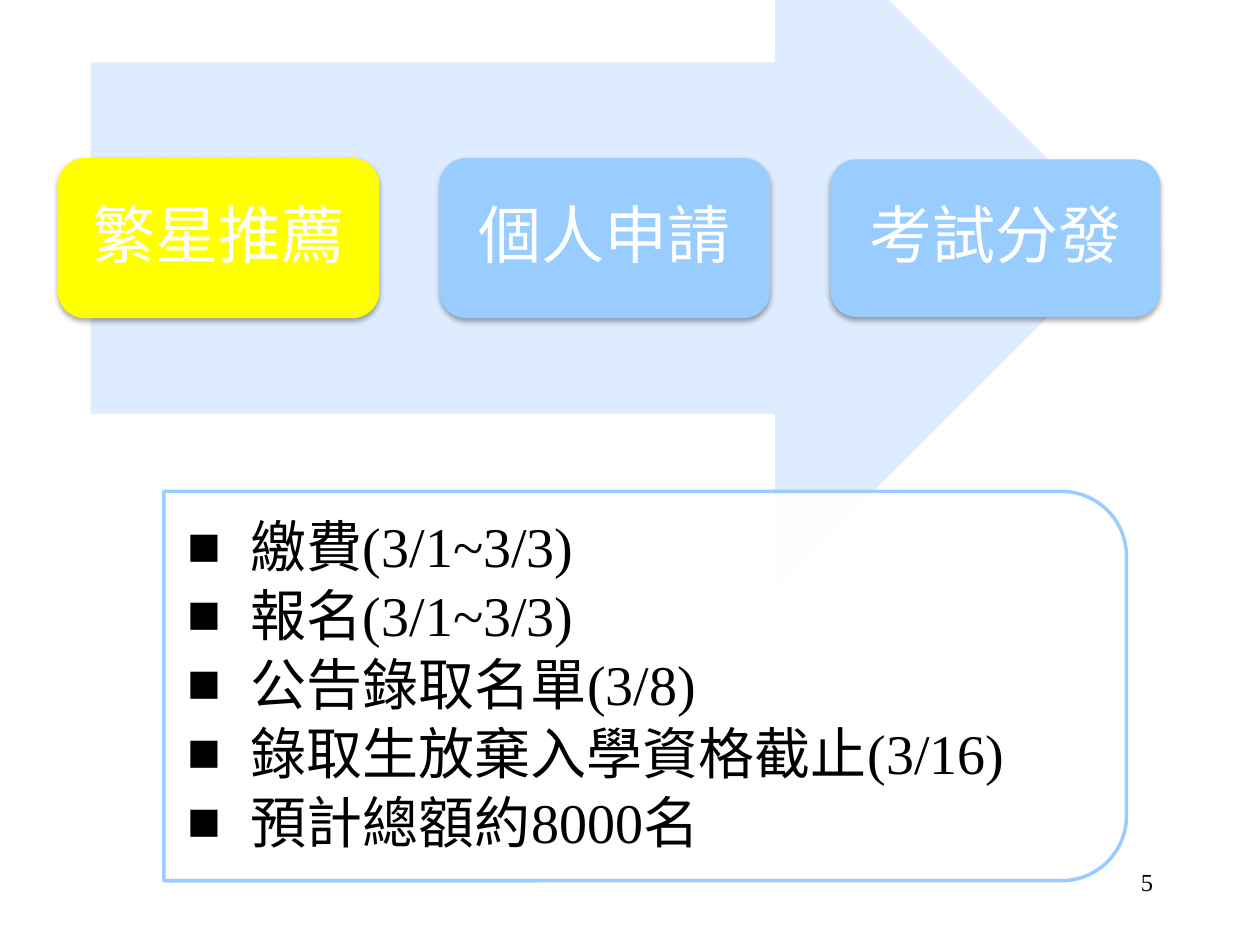
"""Build the admission channel slide: a three-step arrow with a schedule panel."""
from lxml.etree import SubElement
from pptx import Presentation
from pptx.dml.color import RGBColor
from pptx.enum.shapes import MSO_SHAPE
from pptx.enum.text import MSO_ANCHOR, MSO_AUTO_SIZE, PP_ALIGN
from pptx.oxml.ns import qn
from pptx.util import Inches, Pt

COLORS = {"white": "FFFFFF", "black": "000000", "arrow": "DEECFF",
          "current": "FFFF00", "step": "99CCFF"}
CHINESE_FONT, LATIN_FONT = "Noto Sans CJK SC", "Times New Roman"
STEPS = [
    ("繁星推薦", "current", 0.46, 2.55, 1.27),
    ("個人申請", "step", 3.49, 2.62, 1.27),
    ("考試分發", "step", 6.59, 2.62, 1.25),
]
SCHEDULE = ["繳費(3/1~3/3)", "報名(3/1~3/3)", "公告錄取名單(3/8)",
            "錄取生放棄入學資格截止(3/16)", "預計總額約8000名"]
PAGE_NUMBER = "5"
STEP_MIDDLE = 1.89
ARROW_BOX = (0.72, -0.9, 8.22, 5.58)
PANEL_LEFT, PANEL_TOP, PANEL_WIDTH, PANEL_HEIGHT = 1.3, 3.9, 7.64, 3.09
LIST_BOX = (1.3, 4.06, 7.58, 2.79)
NUMBER_BOX = (7.17, 6.83, 2.08, 0.5)


def color(name):
    return RGBColor.from_string(COLORS[name])


def add_element(parent, tag, **attributes):
    return SubElement(parent, qn(tag), attributes)


def add_shape(slide, preset, box, fill):
    shape = slide.shapes.add_shape(preset, *map(Inches, box))
    shape.shadow.inherit = False
    shape.fill.solid()
    shape.fill.fore_color.rgb = color(fill)
    shape.line.fill.background()
    return shape


def add_soft_shadow(shape):
    effects = shape._element.spPr.find(qn("a:effectLst"))
    shadow = add_element(effects, "a:outerShdw", blurRad=str(Pt(3.1)), dist=str(Pt(1.8)),
                         dir="5400000", rotWithShape="0")
    tint = add_element(shadow, "a:srgbClr", val=COLORS["black"])
    add_element(tint, "a:alpha", val="35000")


def set_margins(frame, left, others):
    frame.margin_left = Inches(left)
    frame.margin_top = frame.margin_right = frame.margin_bottom = Inches(others)
    frame.vertical_anchor = MSO_ANCHOR.MIDDLE
    frame.word_wrap = True


def space_after(paragraph, percent):
    spacing = add_element(paragraph._p.get_or_add_pPr(), "a:spcAft")
    add_element(spacing, "a:spcPct", val=str(percent * 1000))


def format_run(paragraph, size, name, fill):
    run = paragraph.runs[0]
    run.font.size, run.font.name = Pt(size), name
    run.font.color.rgb = color(fill)
    add_element(run._r.get_or_add_rPr(), "a:ea", typeface=CHINESE_FONT)


def add_step(slide, label, fill, left, width, height):
    box = (left, STEP_MIDDLE - height / 2, width, height)
    shape = add_shape(slide, MSO_SHAPE.ROUNDED_RECTANGLE, box, fill)
    add_soft_shadow(shape)
    set_margins(shape.text_frame, 0.15, 0.15)
    paragraph = shape.text_frame.paragraphs[0]
    paragraph.text = label
    space_after(paragraph, 35)
    paragraph.alignment = PP_ALIGN.CENTER
    paragraph.line_spacing = 0.9
    format_run(paragraph, 36, CHINESE_FONT, "white")


def add_panel(slide):
    shift = (PANEL_WIDTH - PANEL_HEIGHT) / 2
    box = (PANEL_LEFT + shift, PANEL_TOP - shift, PANEL_HEIGHT, PANEL_WIDTH)
    panel = add_shape(slide, MSO_SHAPE.ROUND_2_SAME_RECTANGLE, box, "white")
    panel.rotation = 90
    panel.line.color.rgb = color("step")
    panel.line.width = Pt(2)
    fill = panel._element.spPr.find(qn("a:solidFill"))
    add_element(fill[0], "a:alpha", val="90000")


def fill_schedule(slide, body):
    body.left, body.top, body.width, body.height = map(Inches, LIST_BOX)
    slide.shapes._spTree.append(body._element)
    frame = body.text_frame
    frame.text = "\n".join(SCHEDULE)
    frame.auto_size = MSO_AUTO_SIZE.NONE
    set_margins(frame, 0.19, 0.02)
    for paragraph in frame.paragraphs:
        paragraph.level = 1
        properties = paragraph._p.get_or_add_pPr()
        properties.set("marL", str(Inches(0.5)))
        properties.set("indent", str(Inches(-0.5)))
        space_after(paragraph, 15)
        add_element(add_element(properties, "a:buClr"), "a:srgbClr", val=COLORS["black"])
        add_element(properties, "a:buFont", typeface=LATIN_FONT)
        add_element(properties, "a:buChar", char="■")
        paragraph.line_spacing = 0.9
        paragraph.space_before = Pt(0)
        format_run(paragraph, 32, LATIN_FONT, "black")


def add_page_number(slide):
    frame = slide.shapes.add_textbox(*map(Inches, NUMBER_BOX)).text_frame
    frame.word_wrap = True
    paragraph = frame.paragraphs[0]
    paragraph.text = PAGE_NUMBER
    paragraph.alignment = PP_ALIGN.RIGHT
    format_run(paragraph, 14, LATIN_FONT, "black")


def main():
    presentation = Presentation()
    presentation.slide_width, presentation.slide_height = Inches(10), Inches(7.5)
    slide = presentation.slides.add_slide(presentation.slide_layouts[1])
    title, body = slide.placeholders
    slide.shapes._spTree.remove(title._element)
    add_page_number(slide)
    add_shape(slide, MSO_SHAPE.RIGHT_ARROW, ARROW_BOX, "arrow")
    for step in STEPS:
        add_step(slide, *step)
    add_panel(slide)
    fill_schedule(slide, body)
    presentation.save("out.pptx")


if __name__ == "__main__":
    main()
